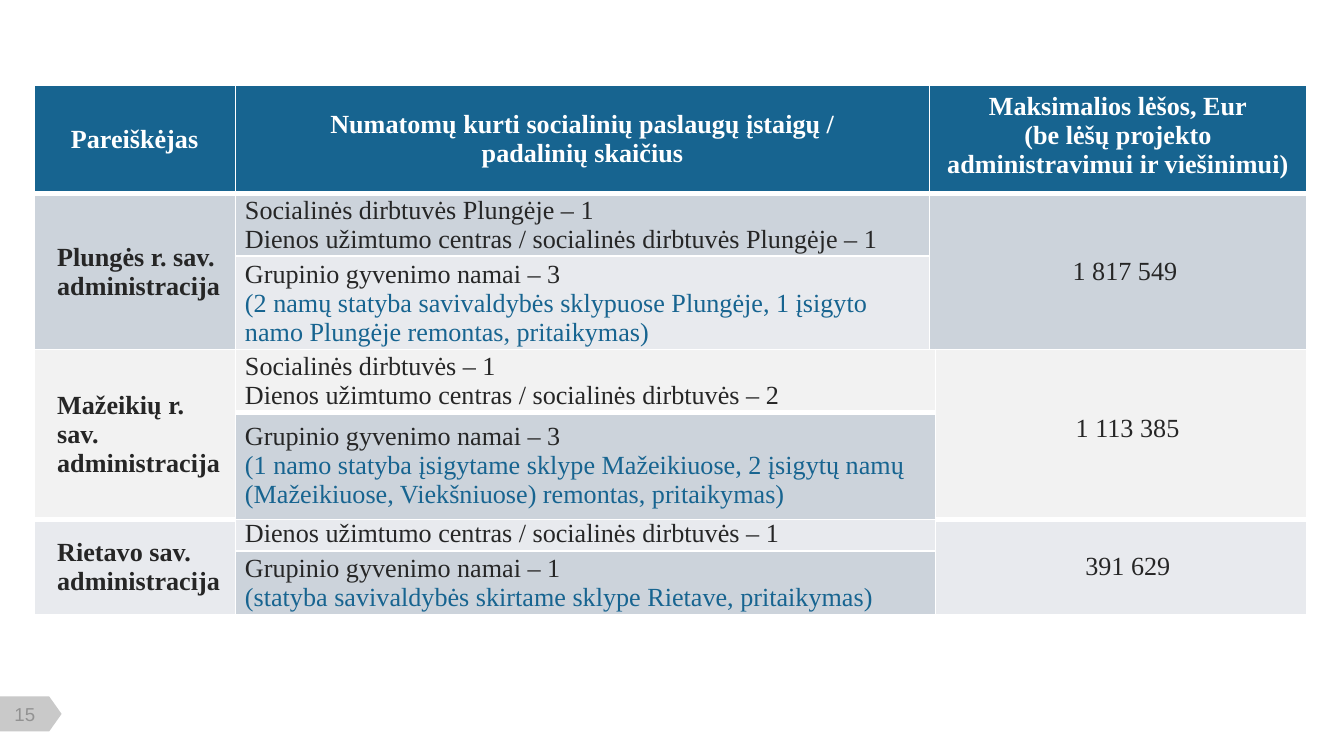
"""Build a slide of funding limits per municipality."""
from dataclasses import dataclass

from lxml.etree import SubElement
from pptx import Presentation
from pptx.dml.color import RGBColor
from pptx.enum.shapes import MSO_SHAPE as Shape
from pptx.enum.text import MSO_ANCHOR as Anchor, PP_ALIGN as Align
from pptx.oxml.ns import qn
from pptx.util import Cm, Pt

WHITE = RGBColor(0xFF, 0xFF, 0xFF)
BLUE = RGBColor(0x17, 0x64, 0x90)
INK = RGBColor(0x26, 0x26, 0x26)
STEEL = RGBColor(0xCC, 0xD3, 0xDB)
PALE = RGBColor(0xE8, 0xEA, 0xEE)
LIGHT = RGBColor(0xF2, 0xF2, 0xF2)
TAB_GRAY = RGBColor(0xC9, 0xC9, 0xC9)
NUMBER_GRAY = RGBColor(0x92, 0x92, 0x92)


@dataclass
class Entry:
    row: int
    column: int
    lines: list
    fill: RGBColor
    color: RGBColor = INK
    detail: str = ""
    bold: bool = False
    align: Align = Align.LEFT
    anchor: Anchor = Anchor.MIDDLE
    margins: tuple = (0.18, 0, 0.18, 0)
    rows: int = 1
    rule: int = 1


def header(column, lines, **options):
    return Entry(0, column, lines, BLUE, WHITE, bold=True, align=Align.CENTER, rule=3, **options)


def applicant(row, name, fill, **options):
    return Entry(row, 0, [name], fill, bold=True, margins=(0.44, 0, 0.18, 0), rows=2, **options)


def amount(row, value, fill, margins=(0.44, 0, 0.18, 0), **options):
    return Entry(row, 2, [value], fill, align=Align.CENTER, margins=margins, rows=2, **options)


def services(row, lines, fill, **options):
    return Entry(row, 1, lines, fill, **options)


class SlideBuilder:
    """Hold the text style and the current slide."""

    font = "Times New Roman"
    size = 14

    def __init__(self, slide):
        self.slide = slide

    def run(self, paragraph, text, color, bold=False, font=None, size=None):
        run = paragraph.add_run()
        run.text = text
        run.font.name = font or self.font
        run.font.size = Pt(size or self.size)
        run.font.bold = bold
        run.font.color.rgb = color

    def border(self, cell, side, points):
        properties = cell._tc.get_or_add_tcPr()
        line = SubElement(properties, qn(f"a:ln{side}"), w=str(Pt(points)))
        fill = SubElement(line, qn("a:solidFill"))
        SubElement(fill, qn("a:srgbClr"), val=str(WHITE))

    def cell(self, table, entry):
        cell = table.cell(entry.row, entry.column)
        if entry.rows > 1:
            cell.merge(table.cell(entry.row + entry.rows - 1, entry.column))
        for side, points in (("L", 1), ("R", 1), ("B", entry.rule)):
            self.border(cell, side, points)
        cell.fill.solid()
        cell.fill.fore_color.rgb = entry.fill
        cell.vertical_anchor = entry.anchor
        (cell.margin_left, cell.margin_top,
         cell.margin_right, cell.margin_bottom) = map(Cm, entry.margins)
        lines = [(line, entry.color) for line in entry.lines]
        if entry.detail:
            lines.append((entry.detail, BLUE))
        for index, (text, color) in enumerate(lines):
            frame = cell.text_frame
            paragraph = frame.add_paragraph() if index else frame.paragraphs[0]
            paragraph.alignment = entry.align
            self.run(paragraph, text, color, entry.bold)

    def table(self, left, top, widths, heights, entries):
        table = self.slide.shapes.add_table(
            len(heights), len(widths), Cm(left), Cm(top),
            Cm(sum(widths)), Cm(sum(heights))).table
        table.horz_banding = False
        for column, width in zip(table.columns, widths):
            column.width = Cm(width)
        for row, height in zip(table.rows, heights):
            row.height = Cm(height)
        for entry in entries:
            self.cell(table, entry)

    def page_tab(self, left, top, width, height):
        shape = self.slide.shapes.add_shape(
            Shape.FLOWCHART_OFFPAGE_CONNECTOR, Cm(left), Cm(top), Cm(width), Cm(height))
        shape.rotation = 270
        shape.shadow.inherit = False
        shape.fill.solid()
        shape.fill.fore_color.rgb = TAB_GRAY
        shape.line.fill.background()

    def page_number(self, left, top, width, height, number):
        frame = self.slide.shapes.add_textbox(Cm(left), Cm(top), Cm(width), Cm(height)).text_frame
        frame.word_wrap = True
        frame.vertical_anchor = Anchor.MIDDLE
        frame.margin_left = frame.margin_top = frame.margin_right = frame.margin_bottom = 0
        paragraph = frame.paragraphs[0]
        paragraph.alignment = Align.CENTER
        self.run(paragraph, number, NUMBER_GRAY, font="Arial", size=10)


def main():
    presentation = Presentation()
    presentation.slide_width = Cm(25.4)
    presentation.slide_height = Cm(14.28)
    builder = SlideBuilder(presentation.slides.add_slide(presentation.slide_layouts[6]))

    builder.page_tab(0.25, 12.9, 0.66, 1.17)
    builder.page_number(0.05, 13.28, 0.84, 0.43, "15")

    builder.table(0.64, 1.61, (3.81, 13.12, 7.12), (2.01, 1.19, 1.79), [
        header(0, ["Pareiškėjas"]),
        header(1, ["Numatomų kurti socialinių paslaugų įstaigų /", "padalinių skaičius"]),
        header(2, ["Maksimalios lėšos, Eur",
                   "(be lėšų projekto administravimui ir viešinimui)"],
               anchor=Anchor.TOP, margins=(0.25, 0.13, 0.25, 0.13)),
        applicant(1, "Plungės r. sav. administracija", STEEL),
        services(1, ["Socialinės dirbtuvės Plungėje – 1",
                     "Dienos užimtumo centras / socialinės dirbtuvės Plungėje – 1"], STEEL),
        amount(1, "1 817 549", STEEL),
        services(2, ["Grupinio gyvenimo namai – 3"], PALE,
                 detail="(2 namų statyba savivaldybės sklypuose Plungėje, "
                        "1 įsigyto namo Plungėje remontas, pritaikymas)"),
    ])

    builder.table(0.64, 6.6, (3.81, 13.23, 7.01), (1.19, 2.02, 0.6, 1.2), [
        applicant(0, "Mažeikių r. sav. administracija", LIGHT, rule=3),
        services(0, ["Socialinės dirbtuvės – 1",
                     "Dienos užimtumo centras / socialinės dirbtuvės – 2"], LIGHT, rule=3),
        amount(0, "1 113 385", LIGHT, anchor=Anchor.TOP,
               margins=(0.5, 1.22, 0.25, 0.13), rule=3),
        services(1, ["Grupinio gyvenimo namai – 3"], STEEL,
                 detail="(1 namo statyba įsigytame sklype Mažeikiuose, 2 įsigytų namų "
                        "(Mažeikiuose, Viekšniuose) remontas, pritaikymas)"),
        applicant(2, "Rietavo sav. administracija", PALE),
        services(2, ["Dienos užimtumo centras / socialinės dirbtuvės – 1"], PALE,
                 anchor=Anchor.TOP),
        amount(2, "391 629", PALE),
        services(3, ["Grupinio gyvenimo namai – 1"], STEEL,
                 detail="(statyba savivaldybės skirtame sklype Rietave, pritaikymas)"),
    ])

    presentation.save("out.pptx")


if __name__ == "__main__":
    main()
